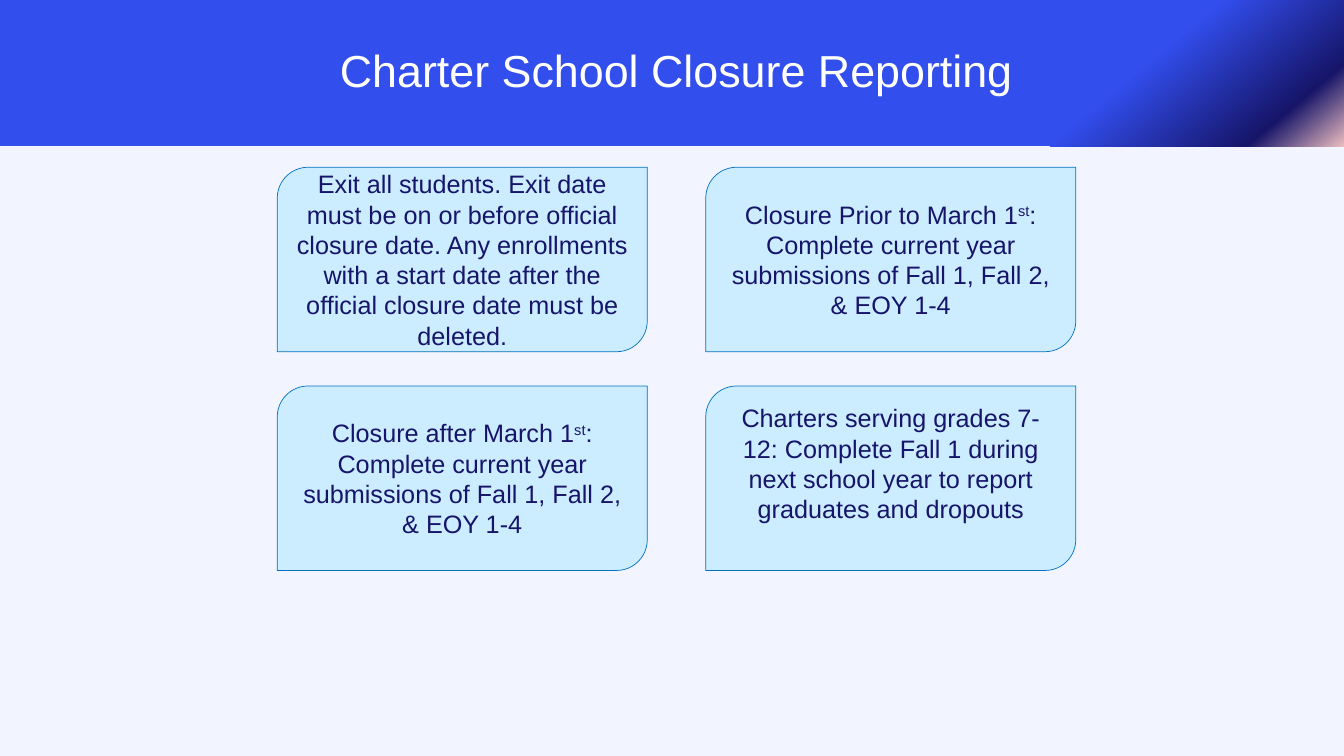
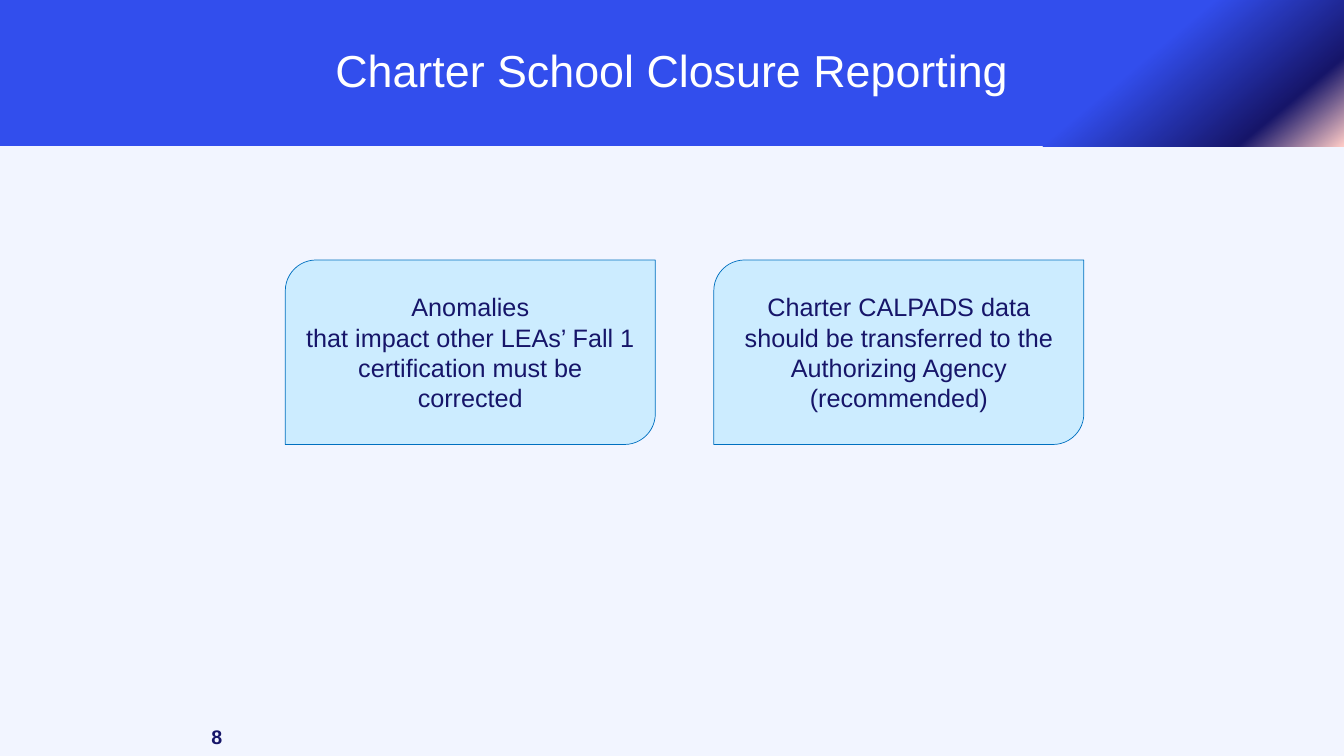
from dataclasses import dataclass

from lxml import etree
from pptx import Presentation
from pptx.dml.color import RGBColor
from pptx.enum.shapes import MSO_SHAPE
from pptx.enum.text import MSO_ANCHOR, MSO_AUTO_SIZE, PP_ALIGN
from pptx.oxml.ns import qn
from pptx.util import Inches, Pt

CARD_SHAPE = MSO_SHAPE.ROUND_2_DIAG_RECTANGLE
CENTER = PP_ALIGN.CENTER
MIDDLE, BOTTOM = MSO_ANCHOR.MIDDLE, MSO_ANCHOR.BOTTOM
NO_FIT = MSO_AUTO_SIZE.NONE
TITLE_ONLY = 5


@dataclass(frozen=True)
class Theme:
    font: str = "Arial"
    background: str = "F2F5FF"
    ink: str = "161569"
    title_ink: str = "FFFFFF"
    card_fill: str = "CCECFF"
    card_line: str = "0070C0"
    band_stops: tuple = ((80, "324EED"), (93, "161569"), (100, "FFCCC7"))
    band_angle: int = 50
    title_size: int = 32
    card_size: int = 18
    number_size: int = 14


class Deck:
    # Card grid, in inches
    card_width, card_height = 3.67, 1.83
    column_step, row_step = 4.25, 2.17

    def __init__(self, theme):
        self.theme = theme
        self.file = Presentation()
        self.file.slide_width, self.file.slide_height = Inches(13.33), Inches(7.5)
        self.page = None

    def style(self, para, size, color, bold=False):
        para.alignment = CENTER
        para.font.name = self.theme.font
        para.font.size = Pt(size)
        para.font.bold = bold
        para.font.color.rgb = RGBColor.from_string(color)

    def gradient(self, shape):
        """Fill a shape with the diagonal band gradient."""
        shape.fill.gradient()
        gradient = shape.fill._xPr.find(qn("a:gradFill"))
        stops = gradient.find(qn("a:gsLst"))
        for stop in list(stops):
            stops.remove(stop)
        for position, color in self.theme.band_stops:
            stop = etree.SubElement(stops, qn("a:gs"), pos=str(position * 1000))
            etree.SubElement(stop, qn("a:srgbClr"), val=color)
        line = gradient.find(qn("a:lin"))
        line.set("ang", str(self.theme.band_angle * 60000))
        line.set("scaled", "0")

    def add_page(self, title, band_width):
        """Start a slide with its background and title band."""
        self.page = self.file.slides.add_slide(self.file.slide_layouts[TITLE_ONLY])
        self.page.background.fill.solid()
        self.page.background.fill.fore_color.rgb = RGBColor.from_string(self.theme.background)
        band = self.page.shapes.title
        band.left, band.top = 0, 0
        band.width, band.height = Inches(band_width), Inches(1.45)
        self.gradient(band)
        frame = band.text_frame
        frame.text = title
        frame.auto_size = NO_FIT
        frame.vertical_anchor = MIDDLE
        para = frame.paragraphs[0]
        para.line_spacing = 0.9
        self.style(para, self.theme.title_size, self.theme.title_ink)

    def add_card(self, left, top, lines, lift=0):
        """Add a card; text between carets is raised, lift moves the text up."""
        card = self.page.shapes.add_shape(
            CARD_SHAPE, Inches(left), Inches(top),
            Inches(self.card_width), Inches(self.card_height))
        card.shadow.inherit = False
        card.fill.solid()
        card.fill.fore_color.rgb = RGBColor.from_string(self.theme.card_fill)
        card.line.color.rgb = RGBColor.from_string(self.theme.card_line)
        card.line.width = Pt(0.5)
        frame = card.text_frame
        frame.word_wrap = True
        frame.vertical_anchor = MIDDLE
        frame.margin_bottom = Inches(0.05 + 2 * lift)
        for index, line in enumerate(lines):
            para = frame.add_paragraph() if index else frame.paragraphs[0]
            self.style(para, self.theme.card_size, self.theme.ink)
            for part, text in enumerate(line.split("^")):
                span = para.add_run()
                span.text = text
                if part % 2:
                    span._r.get_or_add_rPr().set("baseline", "30000")

    def add_cards(self, left, top, cards):
        """Lay cards out two to a row."""
        for index, (lines, lift) in enumerate(cards):
            row, column = divmod(index, 2)
            self.add_card(left + column * self.column_step,
                          top + row * self.row_step, lines, lift)

    def add_number(self, number):
        box = self.page.shapes.add_textbox(
            Inches(1.83), Inches(7.1), Inches(0.64), Inches(0.37))
        frame = box.text_frame
        frame.word_wrap = True
        frame.vertical_anchor = BOTTOM
        frame.text = number
        self.style(frame.paragraphs[0], self.theme.number_size, self.theme.ink, bold=True)


TITLE = "Charter School Closure Reporting"
SUBMISSIONS = "1^st^: Complete current year submissions of Fall 1, Fall 2, & EOY 1-4"


def main():
    deck = Deck(Theme())

    # Closure steps
    deck.add_page(TITLE, 13.42)
    deck.add_cards(2.75, 1.66, [
        (["Exit all students. Exit date must be on or before official closure date. "
          "Any enrollments with a start date after the official closure date must be "
          "deleted."], 0),
        (["Closure Prior to March " + SUBMISSIONS], 0),
        (["Closure after March " + SUBMISSIONS], 0),
        (["Charters serving grades 7-12: Complete Fall 1 during next school year "
          "to report graduates and dropouts"], 0.15),
    ])

    # Corrections and data transfer
    deck.add_page(TITLE, 13.33)
    deck.add_number("8")
    deck.add_cards(2.83, 2.58, [
        (["Anomalies",
          "that impact other LEAs’ Fall 1 certification must be corrected"], 0),
        (["Charter CALPADS data should be transferred to the Authorizing Agency "
          "(recommended)"], 0),
    ])

    deck.file.save("out.pptx")


if __name__ == "__main__":
    main()
